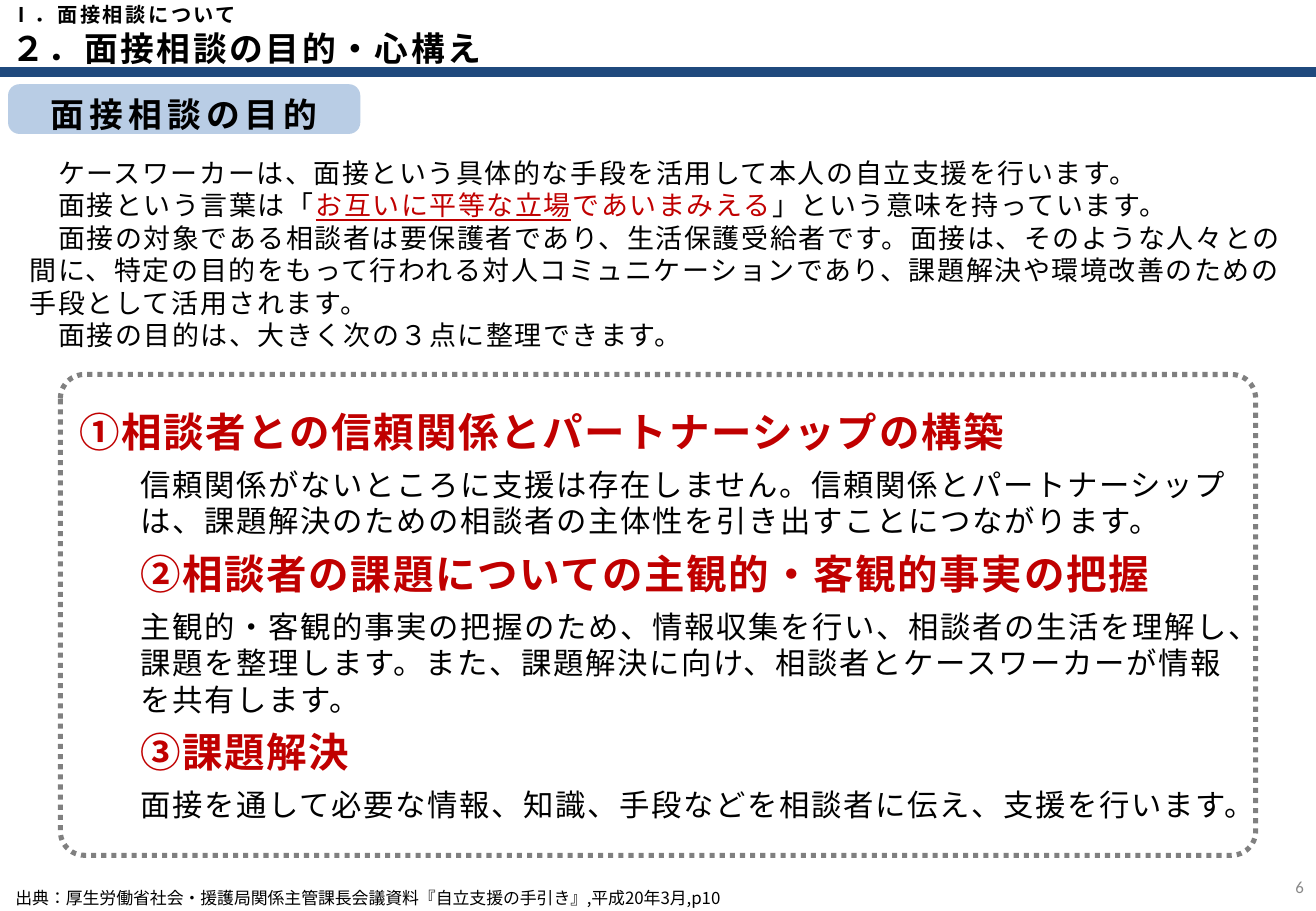
from dataclasses import dataclass

from lxml import etree
from pptx import Presentation
from pptx.dml.color import RGBColor
from pptx.enum.dml import MSO_LINE
from pptx.enum.lang import MSO_LANGUAGE_ID
from pptx.enum.shapes import MSO_CONNECTOR, MSO_SHAPE
from pptx.enum.text import MSO_ANCHOR, MSO_AUTO_SIZE, PP_ALIGN
from pptx.oxml.ns import qn
from pptx.util import Pt

ROUNDED = MSO_SHAPE.ROUNDED_RECTANGLE
STRAIGHT = MSO_CONNECTOR.STRAIGHT
ROUND_DOT = MSO_LINE.ROUND_DOT
TOP, MIDDLE = MSO_ANCHOR.TOP, MSO_ANCHOR.MIDDLE
LEFT, CENTER, RIGHT = PP_ALIGN.LEFT, PP_ALIGN.CENTER, PP_ALIGN.RIGHT
NO_AUTOFIT = MSO_AUTO_SIZE.NONE
JAPANESE = MSO_LANGUAGE_ID.JAPANESE
TITLE_ONLY = 5


@dataclass(frozen=True)
class Theme:
    font: str = "Noto Sans CJK JP"
    number_font: str = "Calibri"
    black: RGBColor = RGBColor(0, 0, 0)
    red: RGBColor = RGBColor(0xC0, 0, 0)
    navy: RGBColor = RGBColor(0x1F, 0x49, 0x7D)
    pale_blue: RGBColor = RGBColor(0xB9, 0xCD, 0xE5)
    gray: RGBColor = RGBColor(0x80, 0x80, 0x80)
    number_gray: RGBColor = RGBColor(0x89, 0x89, 0x89)
    title: int = 20
    chapter: int = 12
    intro: int = 16
    heading: int = 24
    detail: int = 18
    small: int = 10


THEME = Theme()

# Each intro paragraph is a list of (text, is red, is underlined)
INTRO = [
    [("　ケースワーカーは、面接という具体的な手段を活用して本人の自立支援を行います。", False, False)],
    [("　面接という言葉は「", False, False),
     ("お互いに平等な立場", True, True),
     ("であいまみえる", True, False),
     ("」という意味を持っています。", False, False)],
    [("　面接の対象である相談者は要保護者であり、生活保護受給者です。面接は、そのような人々との間に、"
      "特定の目的をもって行われる対人コミュニケーションであり、課題解決や環境改善のための手段として"
      "活用されます。", False, False)],
    [("　面接の目的は、大きく次の３点に整理できます。", False, False)],
]

# Heading, heading indent, explanation
PURPOSES = [
    ("①相談者との信頼関係とパートナーシップの構築", 0,
     "信頼関係がないところに支援は存在しません。信頼関係とパートナーシップは、"
     "課題解決のための相談者の主体性を引き出すことにつながります。"),
    ("②相談者の課題についての主観的・客観的事実の把握", 36,
     "主観的・客観的事実の把握のため、情報収集を行い、相談者の生活を理解し、課題を整理します。"
     "また、課題解決に向け、相談者とケースワーカーが情報を共有します。"),
    ("③課題解決", 36,
     "面接を通して必要な情報、知識、手段などを相談者に伝え、支援を行います。"),
]


def style_paragraph(paragraph, size, color=THEME.black, bold=False, spacing=0,
                    align=LEFT, name=THEME.font, indent=0):
    font = paragraph.font
    font.size, font.bold, font.name = Pt(size), bold, name
    font.color.rgb = color
    font.language_id = JAPANESE
    paragraph.alignment = align
    # Letter spacing, East Asian font and indent
    properties = paragraph._p.get_or_add_pPr()
    properties.set("marL", str(Pt(indent)))
    properties.set("indent", "0")
    defaults = properties.find(qn("a:defRPr"))
    defaults.set("spc", str(int(spacing * 100)))
    etree.SubElement(defaults, qn("a:ea")).set("typeface", name)


def prepare_frame(shape, anchor):
    frame = shape.text_frame
    frame.word_wrap = True
    frame.auto_size = NO_AUTOFIT
    frame.vertical_anchor = anchor
    return frame


def write_line(frame, text, size, **style):
    frame.margin_top = frame.margin_bottom = 0
    frame.text = text
    style_paragraph(frame.paragraphs[0], size, **style)


def add_text_line(slide, box, text, size, **style):
    text_box = slide.shapes.add_textbox(*map(Pt, box))
    write_line(prepare_frame(text_box, MIDDLE), text, size, **style)


def add_panel(slide, box, corner, anchor, fill=None, line=None):
    panel = slide.shapes.add_shape(ROUNDED, *map(Pt, box))
    panel.adjustments[0] = corner
    panel.shadow.inherit = False
    if fill is None:
        panel.fill.background()
    else:
        panel.fill.solid()
        panel.fill.fore_color.rgb = fill
    if line is None:
        panel.line.fill.background()
    else:
        panel.line.color.rgb = line
        panel.line.width = Pt(3)
        panel.line.dash_style = ROUND_DOT
    return prepare_frame(panel, anchor)


def add_paragraphs(frame, count):
    return [frame.paragraphs[0]] + [frame.add_paragraph() for _ in range(count - 1)]


def add_header(slide):
    rule = slide.shapes.add_connector(STRAIGHT, 0, Pt(42.5), Pt(780), Pt(42.5))
    rule.line.color.rgb = THEME.navy
    rule.line.width = Pt(6)
    etree.SubElement(rule._element.spPr, qn("a:effectLst"))

    title = slide.shapes.title
    title.left, title.top, title.width, title.height = map(Pt, (-0.4, 14.7, 653, 28))
    write_line(prepare_frame(title, MIDDLE), "２．面接相談の目的・心構え",
               THEME.title, bold=True, spacing=1.5)
    add_text_line(slide, (0, 1, 653, 15), "Ⅰ．面接相談について",
                  THEME.chapter, bold=True, spacing=1.5)


def add_section_label(slide):
    frame = add_panel(slide, (4.8, 49.9, 208.8, 29.5), 0.23, TOP, fill=THEME.pale_blue)
    frame.text = "面接相談の目的"
    style_paragraph(frame.paragraphs[0], THEME.title, bold=True, spacing=3, align=CENTER)


def add_intro(slide):
    frame = add_panel(slide, (10.5, 89.3, 759, 139.7), 0, TOP)
    for paragraph, parts in zip(add_paragraphs(frame, len(INTRO)), INTRO):
        style_paragraph(paragraph, THEME.intro, spacing=1)
        for text, is_red, is_underlined in parts:
            run = paragraph.add_run()
            run.text = text
            if is_red:
                run.font.color.rgb = THEME.red
            if is_underlined:
                run.font.underline = True


def add_purposes(slide):
    frame = add_panel(slide, (35.8, 222, 708.5, 285), 0.05, MIDDLE, line=THEME.gray)
    paragraphs = add_paragraphs(frame, 2 * len(PURPOSES))
    for paragraph in paragraphs:
        paragraph.space_before = Pt(6)
    for (heading, indent, detail), top, below in zip(PURPOSES, paragraphs[::2], paragraphs[1::2]):
        top.text, below.text = heading, detail
        style_paragraph(top, THEME.heading, THEME.red, bold=True, spacing=1, indent=indent)
        style_paragraph(below, THEME.detail, spacing=1, indent=36)


def add_footer(slide):
    source = add_panel(slide, (1.5, 526.3, 646.5, 11.5), 0.17, MIDDLE)
    write_line(source,
               "出典：厚生労働省社会・援護局関係主管課長会議資料『自立支援の手引き』,平成20年3月,p10",
               THEME.small)
    add_text_line(slide, (750, 511.2, 30, 28.8), "6", THEME.small,
                  color=THEME.number_gray, align=RIGHT, name=THEME.number_font)


def main():
    presentation = Presentation()
    presentation.slide_width, presentation.slide_height = Pt(780), Pt(540)
    slide = presentation.slides.add_slide(presentation.slide_layouts[TITLE_ONLY])

    add_header(slide)
    add_section_label(slide)
    add_intro(slide)
    add_purposes(slide)
    add_footer(slide)

    presentation.save("out.pptx")


if __name__ == "__main__":
    main()
